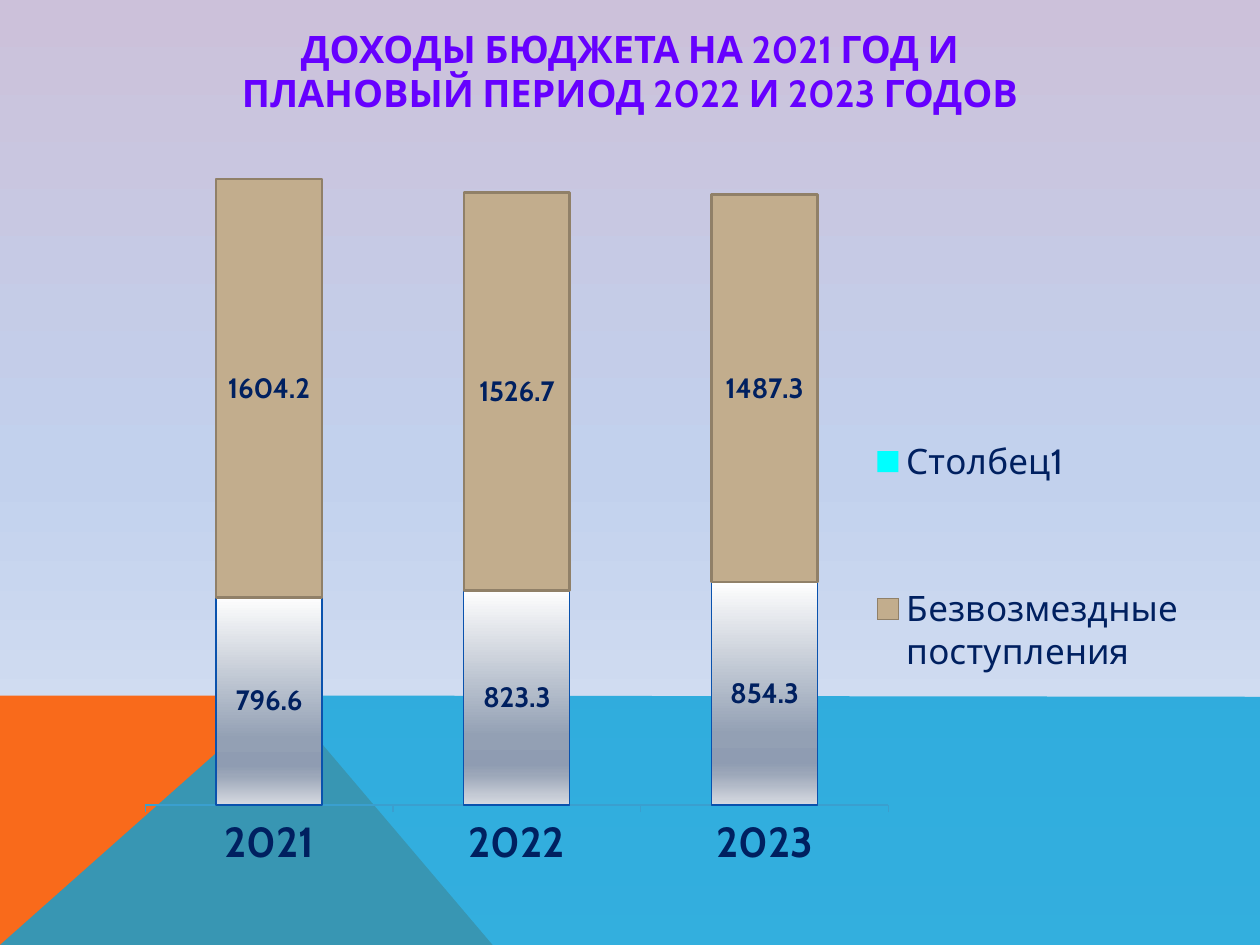
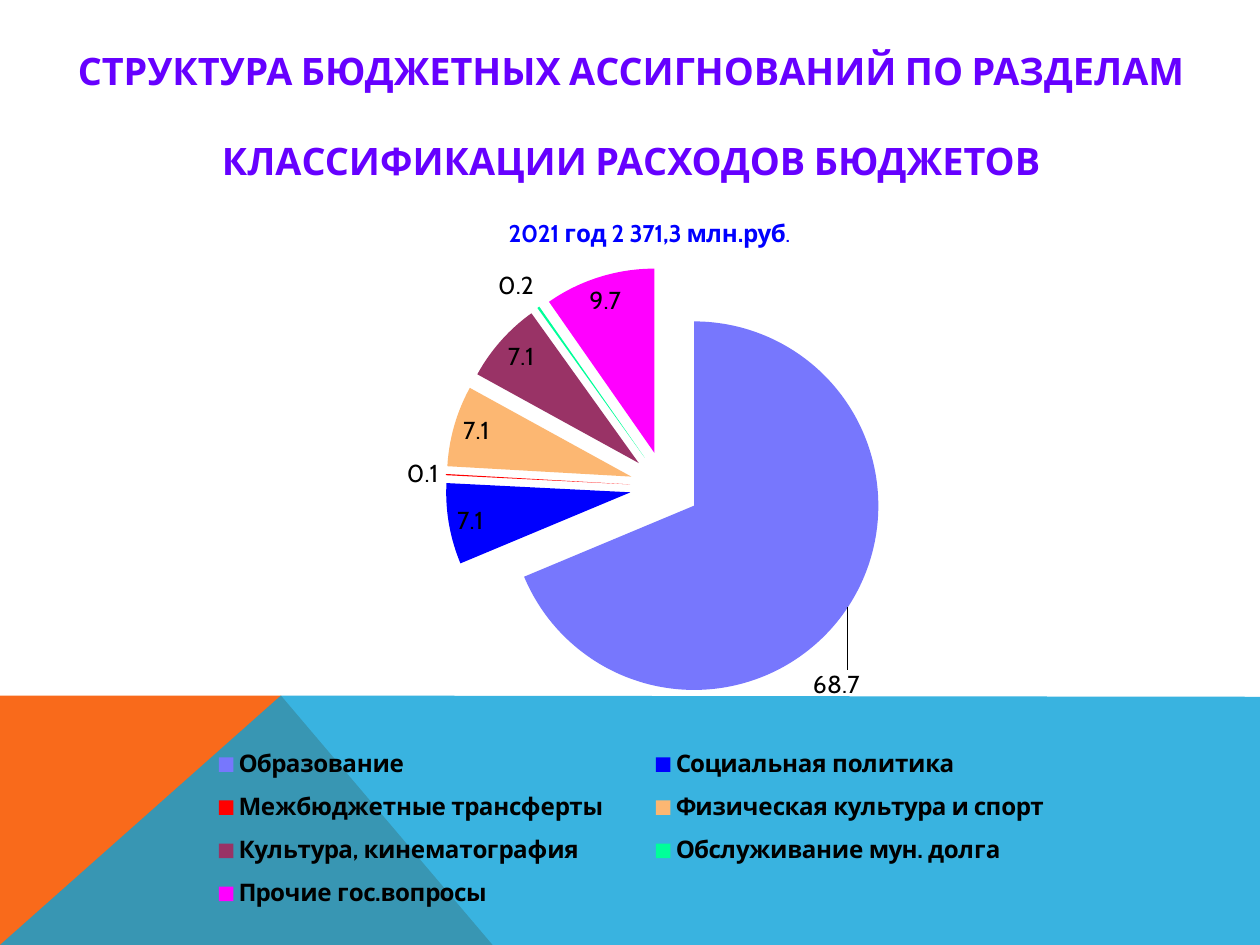
from lxml import etree
from pptx import Presentation
from pptx import util as u
from pptx.chart.data import CategoryChartData
from pptx.dml.color import RGBColor
from pptx.enum import chart as ch, text
from pptx.oxml import ns

FONT = "Cabin"
VIOLET = RGBColor(0x66, 0x00, 0xFF)
NAVY = RGBColor(0x00, 0x20, 0x60)
BLACK = RGBColor(0x00, 0x00, 0x00)
WHITE = RGBColor(0xFF, 0xFF, 0xFF)
BLUE = RGBColor(0x00, 0x00, 0xFF)
ORANGE = RGBColor(0xF9, 0x6A, 0x1B)
SKY = RGBColor(0x08, 0xA1, 0xD9)
TAN = RGBColor(0xC2, 0xAD, 0x8D)
BROWN = RGBColor(0x90, 0x80, 0x68)
COBALT = RGBColor(0x0A, 0x52, 0xAD)
CYAN = RGBColor(0x00, 0xFF, 0xFF)
AXIS = RGBColor(0x3A, 0x9F, 0xCF)

DAWN = [(0, "CCC1DA"), (50, "C2D1ED"), (100, "E1E8F5")]
STEEL = [(0, "FEFEFE"), (68, "93A0B4"), (81, "8F9CB2"),
         (86, "9CA7B9"), (100, "D7DAE1")]

BANDS = [
    (ORANGE, None, [(0, 7.5), (0, 5.52), (2.23, 5.52), (3.91, 7.5)]),
    (SKY, 80, [(0, 7.5), (2.23, 5.52), (10, 5.53), (10, 7.5)]),
]

YEARS = ["2021", "2022", "2023"]
OWN = [796.6, 823.3, 854.3]
GRANTS = [1604.2, 1526.7, 1487.3]

SHARES = [
    ("Образование", 68.7, "7777FD"),
    ("Социальная политика", 7.1, "0000FF"),
    ("Межбюджетные трансферты", 0.1, "FF0000"),
    ("Физическая культура и спорт", 7.1, "FCB772"),
    ("Культура, кинематография", 7.1, "993366"),
    ("Обслуживание мун. долга", 0.2, "00FF99"),
    ("Прочие гос.вопросы", 9.7, "FF00FF"),
]


def node(tag, **attrs):
    item = etree.Element(ns.qn(tag))
    for key, val in attrs.items():
        item.set(key, str(val))
    return item


def style(font, size, color, bold=False):
    font.name = FONT
    font.size = u.Pt(size)
    font.bold = bold
    font.color.rgb = color


def paint(fill, color):
    fill.solid()
    fill.fore_color.rgb = color


def blend(fill, root, stops):
    """Fill from top to bottom with (percent, hex) stops; root holds the fill."""
    fill.gradient()
    fill.gradient_angle = 270
    group = root.xpath(".//a:gsLst")[0]
    for old in list(group):
        group.remove(old)
    for spot, color in stops:
        stop = node("a:gs", pos=spot * 1000)
        stop.append(node("a:srgbClr", val=color))
        group.append(stop)


def place(part, after, x, y, w=None, h=None, inner=False):
    """Give a chart part a manual layout, set after a child or first of all."""
    for old in part.findall(ns.qn("c:layout")):
        part.remove(old)
    layout = node("c:layout")
    manual = node("c:manualLayout")
    layout.append(manual)
    if inner:
        manual.append(node("c:layoutTarget", val="inner"))
    if w:
        manual.append(node("c:xMode", val="edge"))
        manual.append(node("c:yMode", val="edge"))
    for key, val in zip("xywh", (x, y, w, h)):
        if val:
            manual.append(node("c:" + key, val=val))
    if after is None:
        part.insert(0, layout)
    else:
        after.addnext(layout)


def draw_bands(slide):
    for color, alpha, spots in BANDS:
        spots = [(u.Inches(x), u.Inches(y)) for x, y in spots]
        pen = slide.shapes.build_freeform(*spots[0])
        pen.add_line_segments(spots[1:], close=True)
        band = pen.convert_to_shape()
        band.shadow.inherit = False
        paint(band.fill, color)
        band.line.fill.background()
        if alpha:
            tone = band.element.xpath(".//a:solidFill/a:srgbClr")[0]
            tone.append(node("a:alpha", val=alpha * 1000))


def set_title(slide, box, lines, gap=0, foot=0.05):
    title = slide.shapes.title
    title.left, title.top, title.width, title.height = map(u.Inches, box)
    frame = title.text_frame
    frame.word_wrap = True
    frame.auto_size = text.MSO_AUTO_SIZE.NONE
    frame.vertical_anchor = text.MSO_ANCHOR.MIDDLE
    frame.margin_bottom = u.Inches(foot)
    for i, line in enumerate(lines):
        para = frame.add_paragraph() if i else frame.paragraphs[0]
        para.alignment = text.PP_ALIGN.CENTER
        para.line_spacing = u.Pt(25.7)
        para.space_before = u.Pt(gap if i else 0)
        run = para.add_run()
        run.text = line
        style(run.font, 21.6, VIOLET, True)


def add_slide(deck):
    slide = deck.slides.add_slide(deck.slide_layouts[5])
    draw_bands(slide)
    return slide


def add_chart(slide, kind, box, cats, series, size):
    data = CategoryChartData()
    data.categories = cats
    for name, vals in series:
        data.add_series(name, vals)
    frame = slide.shapes.add_chart(kind, *map(u.Inches, box), data)
    chart = frame.chart
    style(chart.font, size, BLACK)
    chart.has_title = False
    return chart


def add_legend(chart, size, color, bold, area, hide=None):
    chart.has_legend = True
    legend = chart.legend
    legend.position = ch.XL_LEGEND_POSITION.RIGHT
    legend.include_in_layout = False
    style(legend.font, size, color, bold)
    part = chart.element.xpath(".//c:legend")[0]
    last = part.xpath("c:legendPos")[0]
    if hide is not None:
        entry = node("c:legendEntry")
        entry.append(node("c:idx", val=hide))
        entry.append(node("c:delete", val=1))
        last.addnext(entry)
        last = entry
    place(part, last, *area)


def set_plot(chart, *area):
    place(chart.element.xpath(".//c:plotArea")[0], None, *area, inner=True)


def label(series, size, color, bold, spot):
    tags = series.data_labels
    tags.show_value = True
    tags.position = spot
    style(tags.font, size, color, bold)


def draw_income(slide):
    chart = add_chart(
        slide, ch.XL_CHART_TYPE.COLUMN_STACKED, (0.75, 1.07, 8.74, 5.91), YEARS,
        [("Series 1", OWN), ("Безвозмездные поступления", GRANTS),
         ("Столбец1", [None] * 3)], 9.7)
    plot = chart.plots[0]
    plot.vary_by_categories = False
    plot.gap_width, plot.overlap = 134, 100
    own, grants, spare = plot.series
    blend(own.format.fill, chart.element, STEEL)
    paint(grants.format.fill, TAN)
    paint(spare.format.fill, CYAN)
    for series, color, width in ((own, COBALT, 0.75), (grants, BROWN, 1.5)):
        series.format.line.color.rgb = color
        series.format.line.width = u.Pt(width)
        label(series, 16, NAVY, True, ch.XL_LABEL_POSITION.CENTER)

    axis = chart.value_axis
    axis.minimum_scale, axis.maximum_scale = 0, 2440
    axis.major_unit = 20
    axis.has_major_gridlines = False
    axis.visible = False
    base = chart.category_axis
    base.major_tick_mark = ch.XL_TICK_MARK.OUTSIDE
    base.format.line.color.rgb = AXIS
    style(base.tick_labels.font, 24, NAVY, True)
    set_plot(chart, 0.046, 0.046, 0.675, 0.854)
    add_legend(chart, 20, NAVY, False, (0.7, 0.27, 0.295, 0.594), hide=0)


def draw_shares(slide):
    names, vals, colors = zip(*SHARES)
    chart = add_chart(slide, ch.XL_CHART_TYPE.PIE, (0.57, 1.62, 9.24, 5.88),
                      names, [("Series 1", vals)], 5.8)
    chart.has_title = True
    para = chart.chart_title.text_frame.paragraphs[0]
    for words, bold in (("2021 год 2 371,3 млн.руб", True), (".", False)):
        run = para.add_run()
        run.text = words
        style(run.font, 13.8, BLUE, bold)
    head = chart.element.xpath(".//c:title")[0]
    place(head, head.xpath("c:tx")[0], 0.372, 0.013, 0.25, 0.06)

    plot = chart.plots[0]
    plot.vary_by_categories = True
    pie = plot.series[0]
    chart.element.xpath(".//c:ser/c:tx")[0].addnext(node("c:explosion", val=19))
    for i, color in enumerate(colors):
        point = pie.points[i]
        paint(point.format.fill, RGBColor.from_string(color))
        point.format.line.fill.background()
        slice_xml = chart.element.xpath(".//c:dPt")[i]
        slice_xml.xpath("c:spPr")[0].addprevious(node("c:explosion", val=19))
    best = ch.XL_LABEL_POSITION.BEST_FIT
    label(pie, 14, BLACK, False, best)
    first = pie.points[0].data_label
    style(first.font, 14, BLACK)
    first.position = best
    tag = chart.element.xpath(".//c:dLbl")[0]
    place(tag, tag.xpath("c:idx")[0], -0.035, 0.078)
    set_plot(chart, 0.095, 0.085, 0.829, 0.592)
    add_legend(chart, 13.8, BLACK, True, (0.087, 0.718, 0.787, 0.252))


def main():
    deck = Presentation()
    deck.slide_width, deck.slide_height = u.Inches(10), u.Inches(7.5)

    slide = add_slide(deck)
    blend(slide.background.fill, slide.element, DAWN)
    set_title(slide, (0.5, 0.3, 9, 0.87),
              ["ДОХОДЫ БЮДЖЕТА НА 2021 ГОД И",
               "ПЛАНОВЫЙ ПЕРИОД 2022 И 2023 ГОДОВ"], foot=0.4)
    draw_income(slide)

    slide = add_slide(deck)
    paint(slide.background.fill, WHITE)
    set_title(slide, (0.51, 0.28, 9, 1.28),
              ["СТРУКТУРА БЮДЖЕТНЫХ АССИГНОВАНИЙ ПО РАЗДЕЛАМ",
               "КЛАССИФИКАЦИИ РАСХОДОВ БЮДЖЕТОВ"], gap=25.7)
    draw_shares(slide)

    deck.save("out.pptx")


if __name__ == "__main__":
    main()
